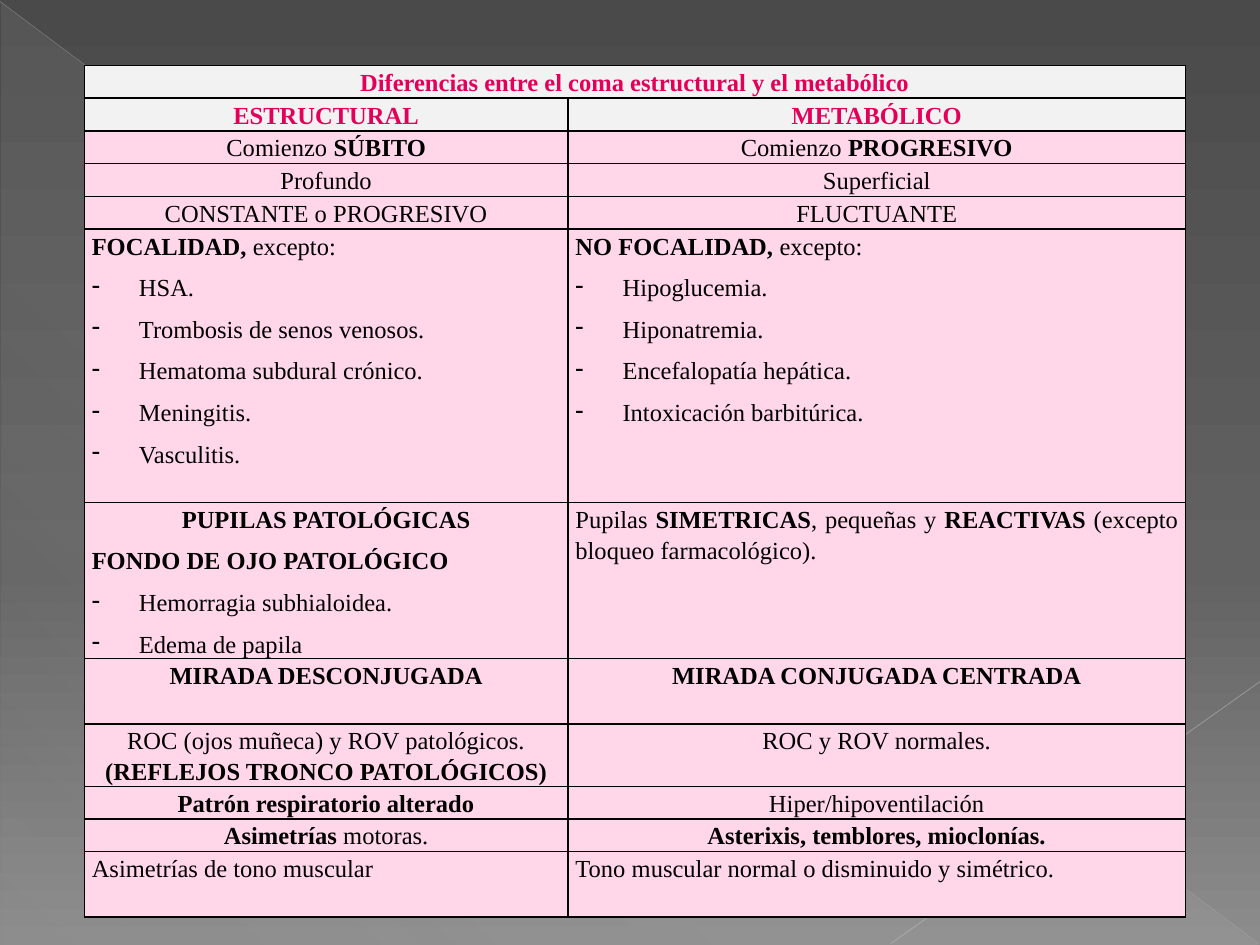
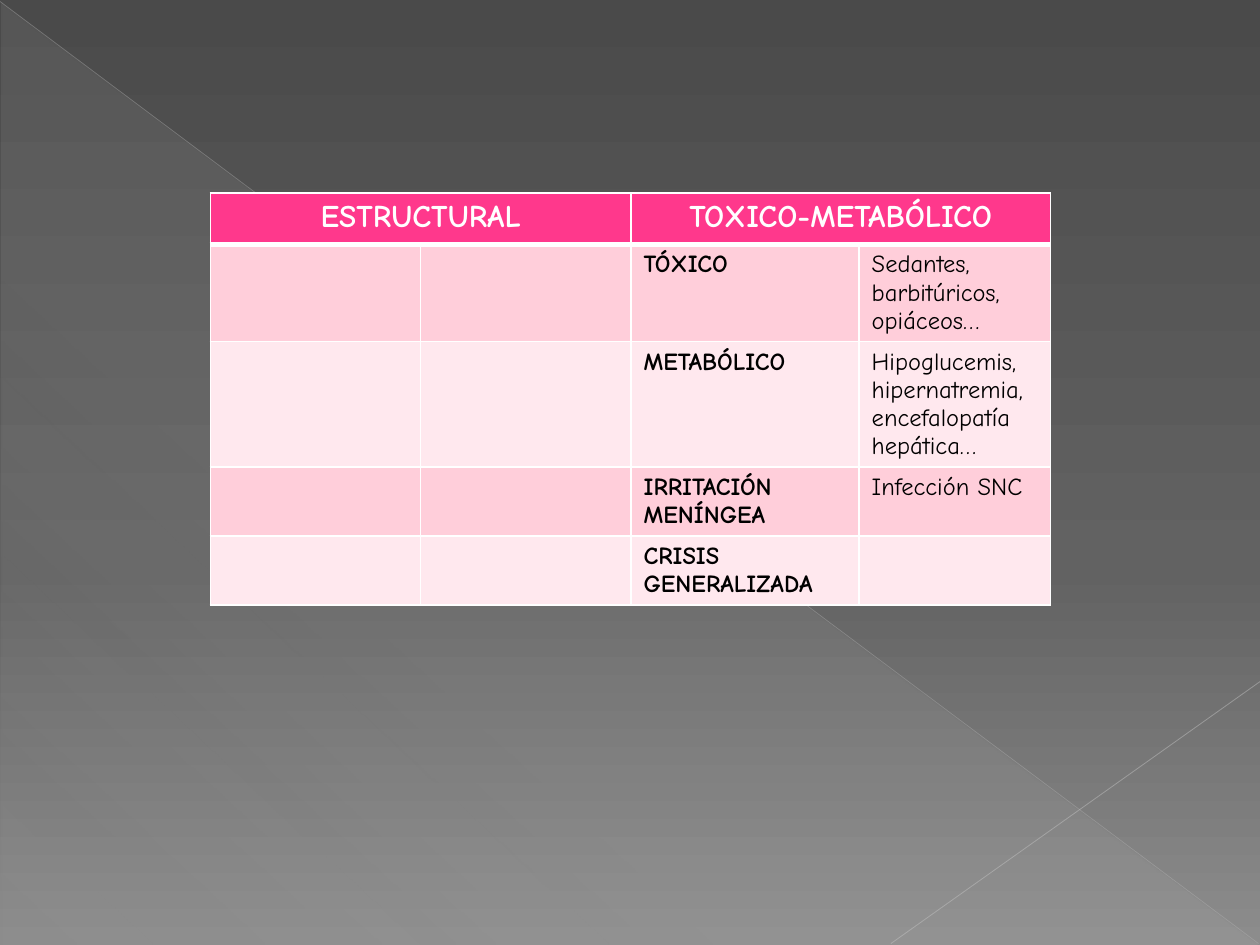
"""Builds two slides that compare structural and metabolic coma in tables."""
from lxml.etree import SubElement
from pptx import Presentation
from pptx.dml.color import RGBColor
from pptx.enum.shapes import MSO_CONNECTOR, MSO_SHAPE
from pptx.enum.text import PP_ALIGN
from pptx.oxml.ns import qn
from pptx.util import Cm, Pt

BLACK = RGBColor(0x00, 0x00, 0x00)
WHITE = RGBColor(0xFF, 0xFF, 0xFF)
CHARCOAL = RGBColor(0x4A, 0x4A, 0x4A)
SLATE = RGBColor(0x62, 0x62, 0x62)
ASH = RGBColor(0x8C, 0x8C, 0x8C)
MIST = RGBColor(0xD2, 0xD2, 0xD2)
DIAGONAL = RGBColor(0xBF, 0xBF, 0xBF)
CORNER = RGBColor(0xC6, 0xC6, 0xC6)
CRIMSON = RGBColor(0xE4, 0x00, 0x59)
PEARL = RGBColor(0xF2, 0xF2, 0xF2)
BLUSH = RGBColor(0xFF, 0xD7, 0xE8)
HOT_PINK = RGBColor(0xFF, 0x38, 0x8C)
ROSE = RGBColor(0xFF, 0xCE, 0xDA)
PALE_ROSE = RGBColor(0xFF, 0xE8, 0xEE)

SERIF = "Times New Roman"
HAND = "Comic Neue"
CENTRED = {"align": PP_ALIGN.CENTER}
JUSTIFIED = {"align": PP_ALIGN.JUSTIFY}
BULLETED = {"align": PP_ALIGN.JUSTIFY, "bullet": "-"}


def centred(text):
    return [(text, CENTRED)]


def justified(text, *items):
    return [(text, JUSTIFIED)] + [(item, BULLETED) for item in items]


DIFFERENCES = [
    (centred("*Diferencias entre el coma estructural y el metabólico*"), []),
    (centred("*ESTRUCTURAL*"), centred("*METABÓLICO*")),
    (centred("Comienzo *SÚBITO*"), centred("Comienzo *PROGRESIVO*")),
    (centred("Profundo"), centred("Superficial")),
    (centred("CONSTANTE o PROGRESIVO"), centred("FLUCTUANTE")),
    (justified("*FOCALIDAD, *excepto:", "HSA.", "Trombosis de senos venosos.",
               "Hematoma subdural crónico.", "Meningitis.", "Vasculitis."),
     justified("*NO FOCALIDAD, *excepto:", "Hipoglucemia.", "Hiponatremia.",
               "Encefalopatía hepática.", "Intoxicación barbitúrica.")),
    (centred("*PUPILAS PATOLÓGICAS*")
     + justified("*FONDO DE OJO PATOLÓGICO*", "Hemorragia subhialoidea.",
                 "Edema de papila"),
     justified("Pupilas *SIMETRICAS*, pequeñas y *REACTIVAS *"
               "(excepto bloqueo farmacológico).")),
    (centred("*MIRADA DESCONJUGADA*"), centred("*MIRADA CONJUGADA CENTRADA*")),
    (centred("ROC (ojos muñeca) y ROV patológicos. *(REFLEJOS TRONCO PATOLÓGICOS)*"),
     centred("ROC y ROV normales.")),
    (centred("*Patrón respiratorio alterado*"), centred("Hiper/hipoventilación")),
    (centred("*Asimetrías *motoras."), centred("*Asterixis, temblores, mioclonías.*")),
    (justified("Asimetrías de tono muscular"),
     justified("Tono muscular normal o disminuido y simétrico.")),
]
DIFFERENCE_HEIGHTS = [0.66] * 5 + [5.51, 2.44, 1.32] + [0.66] * 3 + [1.32]

CAUSES = [
    ("*TÓXICO*", "Sedantes, barbitúricos, opiáceos…"),
    ("*METABÓLICO*", "Hipoglucemis, hipernatremia, encefalopatía hepática…"),
    ("*IRRITACIÓN MENÍNGEA*", "Infección SNC"),
    ("*CRISIS GENERALIZADA*", ""),
]


def set_gradient(gradient, stops, angle):
    """Fill a gradFill element from (position, colour, opacity) stops."""
    gradient.clear()
    stop_list = SubElement(gradient, qn("a:gsLst"))
    for position, color, opacity in stops:
        stop = SubElement(stop_list, qn("a:gs"), pos=str(position * 1000))
        set_opacity(SubElement(stop, qn("a:srgbClr"), val=str(color)), opacity)
    SubElement(gradient, qn("a:lin"), ang=str(angle * 60000), scaled="0")


def set_opacity(color_element, percent):
    """Give a colour element an opacity in percent."""
    SubElement(color_element, qn("a:alpha"), val=str(percent * 1000))


def add_line(page, start, end, color, width, opacity):
    """Draw a thin translucent line between two points in centimetres."""
    line = page.shapes.add_connector(
        MSO_CONNECTOR.STRAIGHT, *(Cm(value) for value in start + end))
    line.line.color.rgb = color
    line.line.width = Pt(width)
    properties = line.element.spPr
    set_opacity(properties.find(".//" + qn("a:srgbClr")), opacity)
    SubElement(properties, qn("a:effectLst"))
    return line


def add_triangle(page):
    """Draw the translucent triangle of the backdrop."""
    triangle = page.shapes.add_shape(
        MSO_SHAPE.RIGHT_TRIANGLE, Cm(0.03), Cm(0.05), Cm(25.35), Cm(19))
    triangle.shadow.inherit = False
    triangle.line.fill.background()
    triangle.fill.gradient()
    set_gradient(triangle.element.spPr.find(qn("a:gradFill")),
                 [(0, MIST, 10), (70, MIST, 8), (100, MIST, 1)], 133)
    return triangle


def decorate_master(deck, page):
    """Draw the shared backdrop on a page and move it to the master."""
    master = deck.slide_master
    master.background.fill.gradient()
    set_gradient(master.element.find(".//" + qn("a:gradFill")),
                 [(0, CHARCOAL, 100), (60, SLATE, 100), (100, ASH, 100)], 90)
    backdrop = [
        add_triangle(page),
        add_line(page, (0, 0.03), (25.37, 19.02), DIAGONAL, 0.39, 35),
        add_line(page, (25.4, 13.74), (17.96, 19.02), CORNER, 0.47, 45),
    ]
    for number, shape in enumerate(backdrop, 101):
        shape.element.xpath("./*/p:cNvPr")[0].set("id", str(number))
        master.shapes.element.append(shape.element)


def write(para, text, font=HAND, size=14, color=BLACK, align=PP_ALIGN.LEFT,
          spacing=None, after=0, bullet=None):
    """Write one paragraph, with asterisks around its bold spans."""
    para.alignment = align
    para.line_spacing = spacing
    para.space_after = Pt(after)
    if bullet:
        properties = para._p.get_or_add_pPr()
        properties.set("marL", str(Cm(0.95)))
        properties.set("indent", str(Cm(-0.95)))
        SubElement(properties, qn("a:buChar"), char=bullet)
    for index, part in enumerate(text.split("*")):
        if part:
            span = para.add_run()
            span.text = part
            span.font.name = font
            span.font.size = Pt(size)
            span.font.color.rgb = color
            span.font.bold = index % 2 == 1


def style_cell(cell, fill, border, top=1, bottom=1):
    """Set the borders and the fill of a cell."""
    properties = cell._tc.get_or_add_tcPr()
    for side, width in (("L", 1), ("R", 1), ("T", top), ("B", bottom)):
        line = SubElement(properties, qn("a:ln" + side), w=str(Pt(width)))
        solid = SubElement(line, qn("a:solidFill"))
        SubElement(solid, qn("a:srgbClr"), val=str(border))
    cell.fill.solid()
    cell.fill.fore_color.rgb = fill


def add_grid(page, left, top, widths, heights):
    """Add a plain table with the given sizes in centimetres."""
    table = page.shapes.add_table(
        len(heights), len(widths), Cm(left), Cm(top),
        Cm(sum(widths)), Cm(sum(heights))).table
    table.first_row = table.horz_banding = False
    for column, width in zip(table.columns, widths):
        column.width = Cm(width)
    for row, height in zip(table.rows, heights):
        row.height = Cm(height)
    return table


def add_differences(page):
    """Add the table of clinical differences."""
    table = add_grid(page, 1.7, 1.32, [9.75, 12.45], DIFFERENCE_HEIGHTS)
    table.cell(0, 0).merge(table.cell(0, 1))
    for row, entries in enumerate(DIFFERENCES):
        is_header = row < 2
        for column, paragraphs in enumerate(entries):
            cell = table.cell(row, column)
            cell.margin_left = cell.margin_right = Cm(0.15)
            cell.margin_top = cell.margin_bottom = 0
            style_cell(cell, PEARL if is_header else BLUSH, BLACK)
            for index, (text, style) in enumerate(paragraphs):
                frame = cell.text_frame
                para = frame.add_paragraph() if index else frame.paragraphs[0]
                write(para, text, font=SERIF, spacing=1.15, after=6,
                      color=CRIMSON if is_header else BLACK, **style)


def add_causes(page):
    """Add the table of causes."""
    table = add_grid(page, 4.24, 3.89, [4.24, 4.24, 4.6, 3.86], [1.04] * 5)
    for column, heading in ((0, "*ESTRUCTURAL*"), (2, "*TOXICO-METABÓLICO*")):
        table.cell(0, column).merge(table.cell(0, column + 1))
        write(table.cell(0, column).text_frame.paragraphs[0], heading,
              size=18, color=WHITE, **CENTRED)
    for column in range(4):
        style_cell(table.cell(0, column), HOT_PINK, WHITE, bottom=3)
    for row, entries in enumerate(CAUSES, 1):
        for column in range(4):
            style_cell(table.cell(row, column), ROSE if row % 2 else PALE_ROSE,
                       WHITE, top=3 if row == 1 else 1)
        for column, text in enumerate(entries, 2):
            write(table.cell(row, column).text_frame.paragraphs[0], text)


def main():
    """Build and save the deck."""
    deck = Presentation()
    deck.slide_width, deck.slide_height = Cm(25.4), Cm(19.05)
    blank = deck.slide_layouts[6]
    differences, causes = (deck.slides.add_slide(blank) for _ in range(2))
    decorate_master(deck, differences)
    add_differences(differences)
    add_causes(causes)
    deck.save("out.pptx")


if __name__ == "__main__":
    main()
